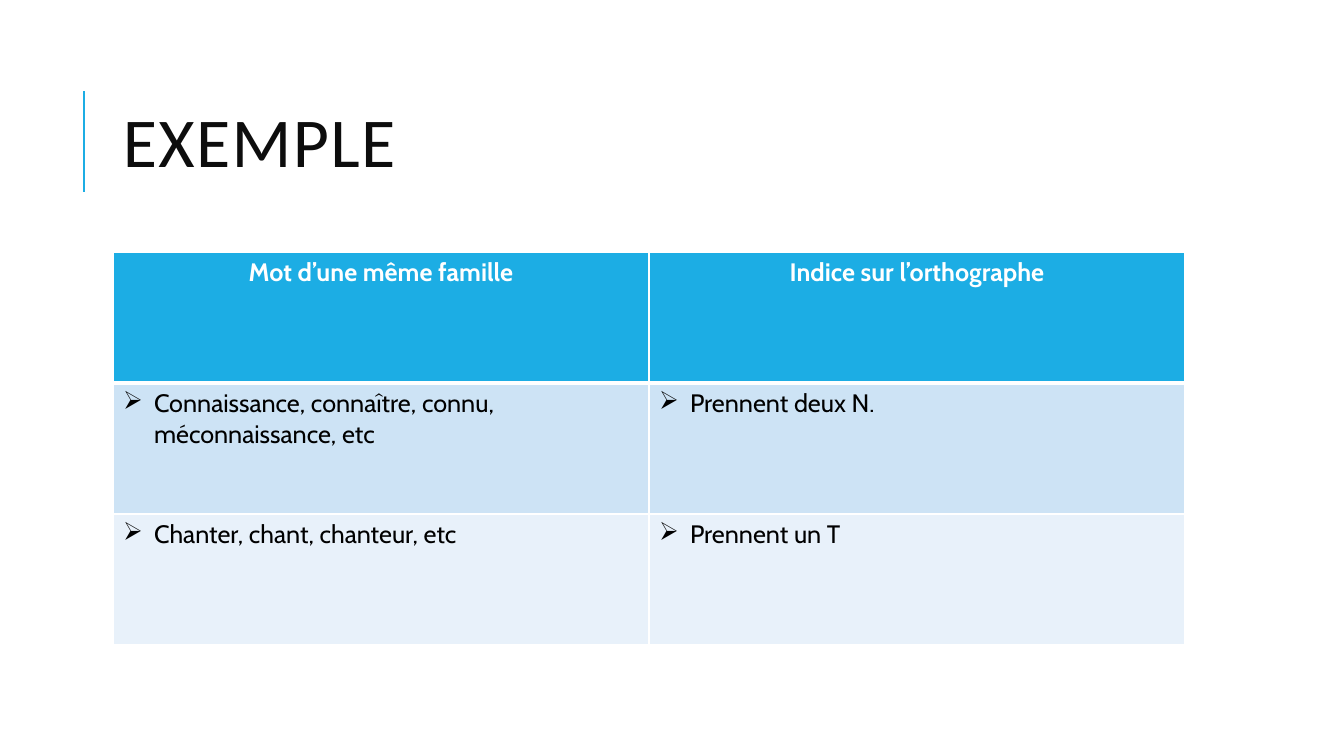
"""Build a slide with a title and a table of word families and spelling clues."""
from dataclasses import dataclass

from lxml.etree import SubElement
from pptx import Presentation
from pptx.dml.color import RGBColor
from pptx.enum.shapes import MSO_CONNECTOR
from pptx.enum.text import MSO_ANCHOR, PP_ALIGN
from pptx.oxml.ns import qn
from pptx.util import Pt

TITLE = "EXEMPLE"
HEADINGS = ("Mot d’une même famille", "Indice sur l’orthographe")
FAMILIES = [
    ("Connaissance, connaître, connu, méconnaissance, etc", "Prennent deux N."),
    ("Chanter, chant, chanteur, etc", "Prennent un T"),
]


@dataclass(frozen=True)
class Theme:
    accent: str = "1CADE4"
    title_ink: str = "0D0D0D"
    ink: str = "000000"
    white: str = "FFFFFF"
    bands: tuple = ("CDE3F5", "E8F1FA")
    title_font: str = "Calibri"
    body_font: str = "Cabin"
    title_size: int = 50
    body_size: int = 18
    thin: int = 1
    thick: int = 3


THEME = Theme()
EMU_PER_PX = 914400 / 100.8
SLIDE_WIDTH, SLIDE_HEIGHT = 1344, 756
LEFT, WIDTH = 113, 1072
TITLE_TOP, TITLE_HEIGHT = 65, 165
RULE_LEFT, RULE_TOP, RULE_BOTTOM = 84, 91, 192
TABLE_TOP, ROW_HEIGHT = 252, 131
BULLET_INDENT = 31


def px(length):
    return round(length * EMU_PER_PX)


def color(value):
    return RGBColor.from_string(value)


def write(frame, text, *, ink, font=THEME.body_font, size=THEME.body_size,
          bold=False, align=PP_ALIGN.LEFT, line_spacing=None, tracking=None, bullet=None):
    para = frame.paragraphs[0]
    para.alignment = align
    if line_spacing:
        para.line_spacing = line_spacing
    if bullet:
        properties = para._p.get_or_add_pPr()
        properties.set("marL", str(px(BULLET_INDENT)))
        properties.set("indent", str(-px(BULLET_INDENT)))
        SubElement(properties, qn("a:buChar"), char=bullet)
    span = para.add_run()
    span.text = text
    span.font.name = font
    span.font.size = Pt(size)
    span.font.bold = bold
    span.font.color.rgb = color(ink)
    if tracking:
        span.font._element.set("spc", str(tracking * 100))


def border(cell, **widths):
    properties = cell._tc.get_or_add_tcPr()
    for side in "LRTB":
        line = SubElement(properties, qn(f"a:ln{side}"),
                          w=str(Pt(widths.get(side, THEME.thin))))
        fill = SubElement(line, qn("a:solidFill"))
        SubElement(fill, qn("a:srgbClr"), val=THEME.white)


def paint(cell, value):
    cell.fill.solid()
    cell.fill.fore_color.rgb = color(value)


def add_rule(page):
    rule = page.shapes.add_connector(MSO_CONNECTOR.STRAIGHT, px(RULE_LEFT), px(RULE_BOTTOM),
                                     px(RULE_LEFT), px(RULE_TOP))
    rule.line.color.rgb = color(THEME.accent)
    rule.line.width = Pt(1.5)
    SubElement(rule._element.spPr, qn("a:effectLst"))


def add_title(page):
    box = page.shapes.add_textbox(px(LEFT), px(TITLE_TOP), px(WIDTH), px(TITLE_HEIGHT))
    box.text_frame.word_wrap = True
    box.text_frame.vertical_anchor = MSO_ANCHOR.MIDDLE
    write(box.text_frame, TITLE, ink=THEME.title_ink, font=THEME.title_font,
          size=THEME.title_size, line_spacing=0.8, tracking=1)


def add_families(page):
    row_count, column_count = len(FAMILIES) + 1, len(HEADINGS)
    table = page.shapes.add_table(row_count, column_count, px(LEFT), px(TABLE_TOP),
                                  px(WIDTH), px(ROW_HEIGHT * row_count)).table
    for column, heading in enumerate(HEADINGS):
        cell = table.cell(0, column)
        border(cell, B=THEME.thick)
        paint(cell, THEME.accent)
        write(cell.text_frame, heading, ink=THEME.white, bold=True, align=PP_ALIGN.CENTER)
    for row, entries in enumerate(FAMILIES, start=1):
        for column, entry in enumerate(entries):
            cell = table.cell(row, column)
            border(cell, T=THEME.thick if row == 1 else THEME.thin)
            paint(cell, THEME.bands[(row - 1) % len(THEME.bands)])
            write(cell.text_frame, entry, ink=THEME.ink, bullet="➢")


def main():
    deck = Presentation()
    deck.slide_width, deck.slide_height = px(SLIDE_WIDTH), px(SLIDE_HEIGHT)
    page = deck.slides.add_slide(deck.slide_layouts[6])
    add_rule(page)
    add_title(page)
    add_families(page)
    deck.save("out.pptx")


if __name__ == "__main__":
    main()
